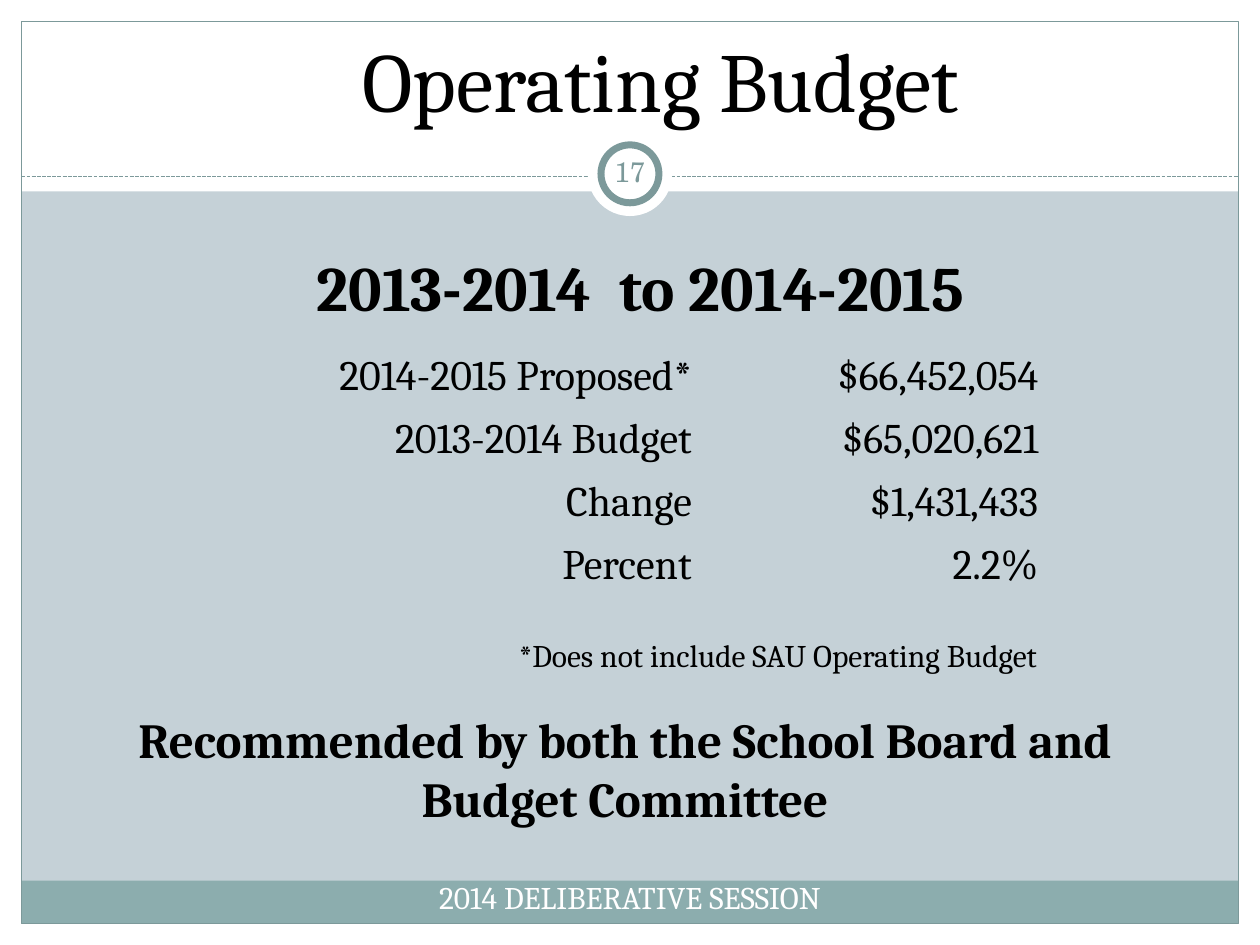
from pptx import Presentation, util as u
from pptx.dml.color import RGBColor
from pptx.enum import dml, shapes, text
from pptx.oxml.ns import qn
from lxml import etree

WHITE, BLACK, TEAL, BAND, BACK = "FFFFFF", "000000", "7C999A", "8CADAE", "C5D1D7"
WIDTH, HEIGHT, MARGIN = 10, 7.5, 0.17
INNER = WIDTH - 2 * MARGIN
RULE_Y = 1.4
CENTER, RIGHT = text.PP_ALIGN.CENTER, text.PP_ALIGN.RIGHT
color = RGBColor.from_string


def write(frame, words, size, align=CENTER, hue=BLACK, bold=False, font="Cambria"):
    frame.text = words
    frame.word_wrap = True
    paragraph = frame.paragraphs[0]
    paragraph.alignment = align
    run_font = paragraph.runs[0].font
    run_font.name, run_font.size, run_font.bold = font, u.Pt(size), bold
    run_font.color.rgb = color(hue)


def add_panel(kind, box, fill=None, line=None, weight=0.75):
    shape = slide.shapes.add_shape(kind, *map(u.Inches, box))
    shape.shadow.inherit = False
    if fill:
        shape.fill.solid()
        shape.fill.fore_color.rgb = color(fill)
    else:
        shape.fill.background()
    if line:
        shape.line.color.rgb = color(line)
        shape.line.width = u.Pt(weight)
    else:
        shape.line.fill.background()


presentation = Presentation()
presentation.slide_width, presentation.slide_height = u.Inches(WIDTH), u.Inches(HEIGHT)
slide = presentation.slides.add_slide(presentation.slide_layouts.get_by_name("Title Only"))
slide.background.fill.solid()
slide.background.fill.fore_color.rgb = color(BACK)

# White margins, header, footer band and frame
RECTANGLE, OVAL = shapes.MSO_SHAPE.RECTANGLE, shapes.MSO_SHAPE.OVAL
for box, fill in (
    ((0, HEIGHT - MARGIN, WIDTH, MARGIN), WHITE),
    ((0, 0, WIDTH, 1.52), WHITE),
    ((0, 0, MARGIN, HEIGHT), WHITE),
    ((WIDTH - MARGIN, 0, MARGIN, HEIGHT), WHITE),
    ((MARGIN, 6.99, INNER, 0.34), BAND),
):
    add_panel(RECTANGLE, box, fill)
add_panel(RECTANGLE, (MARGIN, MARGIN, INNER, HEIGHT - 2 * MARGIN), line=TEAL)

# Dashed rule under the header
rule = slide.shapes.add_connector(
    shapes.MSO_CONNECTOR.STRAIGHT,
    *map(u.Inches, (MARGIN, RULE_Y, WIDTH - MARGIN, RULE_Y)))
rule.line.color.rgb = color(TEAL)
rule.line.width = u.Pt(0.75)
rule.line.dash_style = dml.MSO_LINE.SQUARE_DOT
etree.SubElement(rule._element.spPr, qn("a:effectLst"))

# Round page-number badge
for diameter, line in ((0.67, None), (0.46, TEAL)):
    add_panel(OVAL, ((WIDTH - diameter) / 2, 1.38 - diameter / 2, diameter, diameter),
              WHITE, line, 4)

# Title, kept above the header panel
title = slide.shapes.title
title.left, title.top, title.width, title.height = map(u.Inches, (0.33, 0.25, 9.33, 0.83))
write(title.text_frame, "Operating Budget", 48)
title.text_frame.vertical_anchor = text.MSO_ANCHOR.BOTTOM
title.text_frame.auto_size = text.MSO_AUTO_SIZE.NONE
title.text_frame.paragraphs[0]._p.get_or_add_pPr().set("marL", str(u.Inches(0.5)))
slide.shapes._spTree.append(title._element)

# Budget table
budget = (
    ("2014-2015 Proposed*", "$66,452,054"),
    ("2013-2014 Budget", "$65,020,621"),
    ("Change", "$1,431,433"),
    ("Percent", "2.2%"),
)
table = slide.shapes.add_table(
    len(budget), 2, *map(u.Inches, (1.67, 2.75, 6.67, 2))).table
table.first_row = table.horz_banding = False
NO_STYLE_NO_GRID = "{2D5ABB26-0587-4C30-8999-92F81FD0307C}"
table._tbl.tblPr.find(qn("a:tableStyleId")).text = NO_STYLE_NO_GRID
for column, width in zip(table.columns, (3.92, 2.75)):
    column.width = u.Inches(width)
for row, entries in zip(table.rows, budget):
    for cell, entry in zip(row.cells, entries):
        cell.fill.background()
        write(cell.text_frame, entry, 24, RIGHT)

# Headline, recommendation, footnote and footer
for box, words, size, align, hue, bold in (
    ((1.17, 1.92, 7.83, 0.7), "2013-2014  to 2014-2015", 36, CENTER, BLACK, True),
    ((0.67, 5.58, 8.58, 1.04), "Recommended by both the School Board and Budget Committee",
     28, CENTER, BLACK, True),
    ((2.08, 5, 6.25, 0.4), "*Does not include SAU Operating Budget", 18, RIGHT, BLACK, False),
    ((MARGIN, 6.92, INNER, 0.4), "2014 DELIBERATIVE SESSION", 18, CENTER, WHITE, False),
):
    write(slide.shapes.add_textbox(*map(u.Inches, box)).text_frame,
          words, size, align, hue, bold)

# Page number
number = slide.shapes.add_textbox(*map(u.Inches, (4.75, 1.12, 0.5, 0.48))).text_frame
number.margin_left = number.margin_right = u.Inches(0.05)
number.vertical_anchor = text.MSO_ANCHOR.MIDDLE
write(number, "17", 16, hue=TEAL, font="TeX Gyre Schola")

presentation.save("out.pptx")
